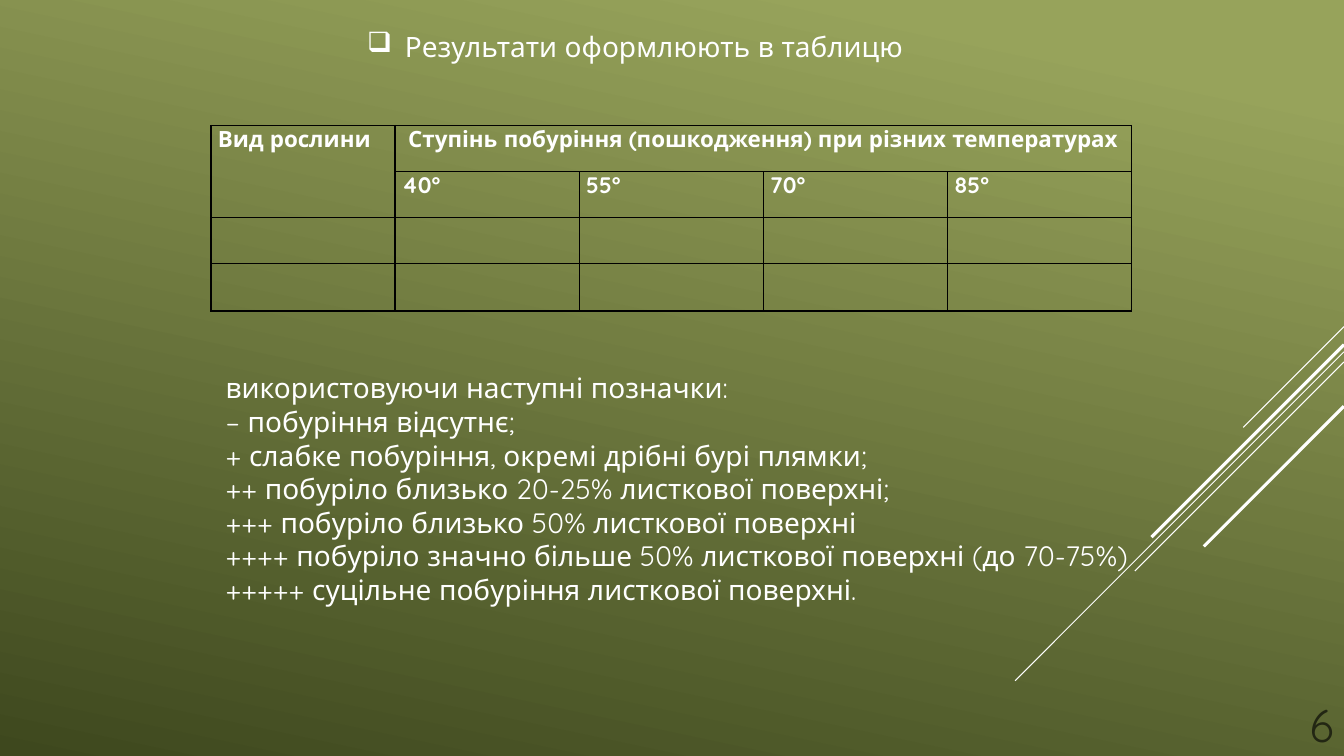
"""Build the slide on recording leaf browning at different temperatures."""
from dataclasses import dataclass

from lxml import etree
from pptx import Presentation
from pptx.dml.color import RGBColor
from pptx.enum.shapes import MSO_CONNECTOR
from pptx.enum.text import MSO_ANCHOR, MSO_AUTO_SIZE, PP_ALIGN
from pptx.oxml.ns import qn
from pptx.slide import Slide
from pptx.table import _Cell
from pptx.text.text import TextFrame
from pptx.util import Pt

STRAIGHT = MSO_CONNECTOR.STRAIGHT
TOP, BOTTOM = MSO_ANCHOR.TOP, MSO_ANCHOR.BOTTOM
NO_FIT, GROW = MSO_AUTO_SIZE.NONE, MSO_AUTO_SIZE.SHAPE_TO_FIT_TEXT
LEFT, CENTER, RIGHT, JUSTIFY = PP_ALIGN.LEFT, PP_ALIGN.CENTER, PP_ALIGN.RIGHT, PP_ALIGN.JUSTIFY
WIDTH, HEIGHT = 960, 540


@dataclass(frozen=True)
class Theme:
    """Colours, font and type sizes."""

    font: str = "Quicksand"
    light: str = "97A35B"
    dark: str = "3E481E"
    text: str = "FFFFFF"
    number: str = "222613"
    border: str = "000000"
    body_size: float = 20
    table_size: float = 16
    number_size: float = 32


@dataclass(frozen=True)
class Ray:
    """A 45-degree line running down-left from the right edge."""

    top: float
    run: float
    weight: float


@dataclass(frozen=True)
class TextBox:
    """A text box with one string per paragraph."""

    left: float
    top: float
    width: float
    height: float
    lines: tuple[str, ...]
    size: float
    color: str
    align: PP_ALIGN
    anchor: MSO_ANCHOR = TOP
    fit: MSO_AUTO_SIZE = GROW
    bullet: str = ""


@dataclass(frozen=True)
class Heading:
    """A table heading and the cells it spans."""

    row: int
    col: int
    text: str
    rows: int = 1
    cols: int = 1
    align: PP_ALIGN = LEFT


THEME = Theme()
RAYS = (
    Ray(233.3, 72, 0.75),
    Ray(251.3, 234.9, 0.75),
    Ray(258.5, 149.4, 0.75),
    Ray(246.2, 137.5, 2.25),
    Ray(290.2, 100.1, 2.25),
)
LEGEND = (
    "використовуючи наступні позначки:",
    "– побуріння відсутнє;",
    "+ слабке побуріння, окремі дрібні бурі плямки;",
    "++ побуріло близько 20-25% листкової поверхні;",
    "+++ побуріло близько 50% листкової поверхні",
    "++++ побуріло значно більше 50% листкової поверхні (до 70-75%)",
    "+++++ суцільне побуріння листкової поверхні.",
)
BOXES = (
    TextBox(924.5, 487.4, 35.3, 52.6, ("6",), THEME.number_size, THEME.number,
            RIGHT, BOTTOM, NO_FIT),
    TextBox(243.4, 17.3, 420.5, 31.5, ("Результати оформлюють в таблицю",),
            THEME.body_size, THEME.text, CENTER, bullet="❑"),
    TextBox(154.1, 261.4, 666.7, 177.1, LEGEND, THEME.body_size, THEME.text, JUSTIFY),
)
HEADINGS = (
    Heading(0, 0, "Вид рослини", rows=2),
    Heading(0, 1, "Ступінь побуріння (пошкодження) при різних температурах",
            cols=4, align=CENTER),
    *(Heading(1, col, f"{degrees}°") for col, degrees in enumerate((40, 55, 70, 85), 1)),
)
TABLE_LEFT, TABLE_TOP = 150.7, 89.7
COLUMN_WIDTH, COLUMNS = 131.5, 5
ROW_HEIGHTS = (32.9, 32.9, 32.9, 33.9)


def paint_background(s: Slide) -> None:
    """Fill the background with the green gradient."""
    fill = s.background.fill
    fill.gradient()
    fill.gradient_angle = 258
    for stop, color, position in zip(
        fill.gradient_stops, (THEME.light, THEME.dark), (0.1, 1)
    ):
        stop.color.rgb = RGBColor.from_string(color)
        stop.position = position


def draw_ray(s: Slide, ray: Ray) -> None:
    """Draw one diagonal line."""
    sp = s.shapes.add_connector(
        STRAIGHT, Pt(WIDTH), Pt(ray.top), Pt(WIDTH - ray.run), Pt(ray.top + ray.run)
    )
    sp.line.color.rgb = RGBColor.from_string(THEME.text)
    sp.line.width = Pt(ray.weight)
    etree.SubElement(sp._element.spPr, qn("a:effectLst"))


def write_lines(tf: TextFrame, lines: tuple[str, ...], size: float, color: str,
                align: PP_ALIGN, bold: bool = False) -> None:
    """Write each line as a paragraph of one run."""
    for i, line in enumerate(lines):
        p = tf.add_paragraph() if i else tf.paragraphs[0]
        p.alignment = align
        r = p.add_run()
        r.text = line
        r.font.name = THEME.font
        r.font.size = Pt(size)
        r.font.bold = bold
        r.font.color.rgb = RGBColor.from_string(color)


def draw_text(s: Slide, box: TextBox) -> None:
    """Draw a text box, with a hanging bullet if it has one."""
    sp = s.shapes.add_textbox(Pt(box.left), Pt(box.top), Pt(box.width), Pt(box.height))
    tf = sp.text_frame
    tf.word_wrap = True
    tf.auto_size = box.fit
    tf.vertical_anchor = box.anchor
    write_lines(tf, box.lines, box.size, box.color, box.align)
    if box.bullet:
        for p in tf.paragraphs:
            ppr = p._p.get_or_add_pPr()
            ppr.set("marL", str(Pt(27)))
            ppr.set("indent", str(Pt(-27)))
            etree.SubElement(ppr, qn("a:buChar"), char=box.bullet)


def style_cell(cell: _Cell) -> None:
    """Clear a cell's fill and give it thin borders."""
    cell.fill.background()
    cell.margin_left = cell.margin_right = Pt(5)
    cell.margin_top = cell.margin_bottom = 0
    tcpr = cell._tc.get_or_add_tcPr()
    for i, side in enumerate(("a:lnL", "a:lnR", "a:lnT", "a:lnB")):
        ln = etree.Element(qn(side), w=str(Pt(1)))
        solid = etree.SubElement(ln, qn("a:solidFill"))
        etree.SubElement(solid, qn("a:srgbClr"), val=THEME.border)
        tcpr.insert(i, ln)


def draw_table(s: Slide) -> None:
    """Draw the results table with its merged headings."""
    table = s.shapes.add_table(
        len(ROW_HEIGHTS), COLUMNS, Pt(TABLE_LEFT), Pt(TABLE_TOP),
        Pt(COLUMN_WIDTH * COLUMNS), Pt(sum(ROW_HEIGHTS)),
    ).table
    table.first_row = table.horz_banding = False
    for column in table.columns:
        column.width = Pt(COLUMN_WIDTH)
    for row, height in zip(table.rows, ROW_HEIGHTS):
        row.height = Pt(height)
    for cell in table.iter_cells():
        style_cell(cell)
    for h in HEADINGS:
        cell = table.cell(h.row, h.col)
        if h.rows * h.cols > 1:
            cell.merge(table.cell(h.row + h.rows - 1, h.col + h.cols - 1))
        write_lines(cell.text_frame, (h.text,), THEME.table_size, THEME.text, h.align, True)


def main() -> None:
    """Build and save the slide."""
    prs = Presentation()
    prs.slide_width, prs.slide_height = Pt(WIDTH), Pt(HEIGHT)
    s = prs.slides.add_slide(prs.slide_layouts[6])
    paint_background(s)
    for ray in RAYS:
        draw_ray(s, ray)
    for box in BOXES:
        draw_text(s, box)
    draw_table(s)
    prs.save("out.pptx")


if __name__ == "__main__":
    main()
